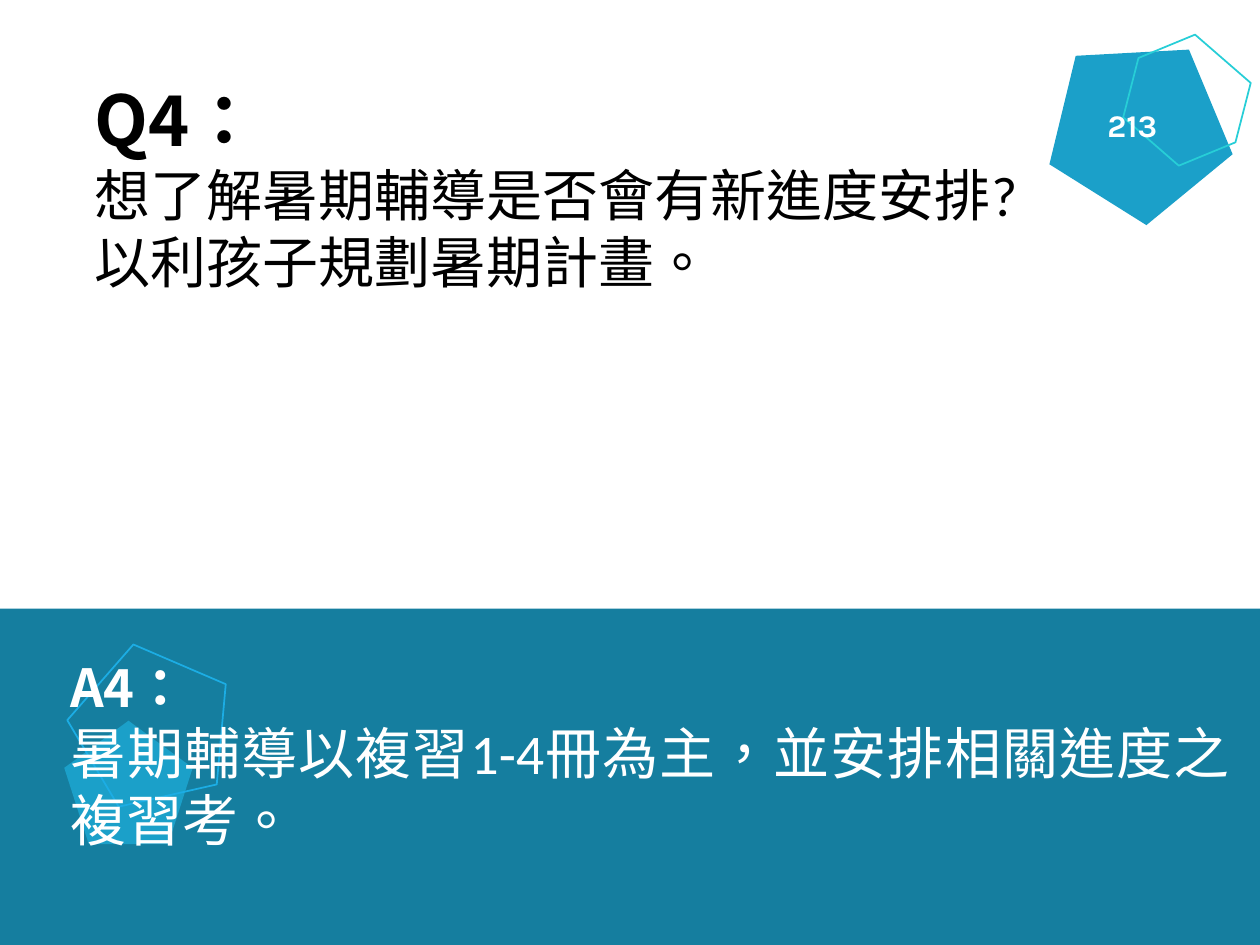
from pptx import Presentation
from pptx.dml.color import RGBColor as Rgb
from pptx.enum.shapes import MSO_SHAPE as Kind
from pptx.enum.text import PP_ALIGN as Align
from pptx.util import Inches, Pt


def tint(code):
    """Turn a hex string into a colour."""
    return Rgb.from_string(code)


class Deck:
    """Hold the style and the current slide."""

    wide, high = 10, 7.5
    deep, blue, sky, teal = "157E9F", "1BA0C9", "1CADE4", "27CED7"
    white, black = "FFFFFF", "000000"
    head, body, mark = "Noto Sans CJK SC", "Calibri", "Karla"

    def __init__(self):
        self.prs = Presentation()
        self.prs.slide_width = Inches(self.wide)
        self.prs.slide_height = Inches(self.high)
        self.slide = self.prs.slides.add_slide(self.prs.slide_layouts[6])

    def place(self, box):
        """Turn percent shares of the slide into lengths."""
        sides = (self.wide, self.high) * 2
        return [Inches(part * side / 100) for part, side in zip(box, sides)]

    def shape(self, kind, box, fill=None, line=None, turn=0):
        """Draw a filled or outlined preset shape."""
        item = self.slide.shapes.add_shape(kind, *self.place(box))
        item.shadow.inherit = False
        item.rotation = turn
        if fill:
            item.fill.solid()
            item.fill.fore_color.rgb = tint(fill)
        else:
            item.fill.background()
        if line:
            item.line.color.rgb = tint(line)
            item.line.width = Pt(1)
        else:
            item.line.fill.background()

    def text(self, box, rows, color):
        """Write rows of text, font, size, weight and alignment."""
        frame = self.slide.shapes.add_textbox(*self.place(box)).text_frame
        frame.word_wrap = True
        frame.text = "\n".join(row[0] for row in rows)
        for para, (_, face, size, bold, align) in zip(frame.paragraphs, rows):
            para.alignment = align
            for run in para.runs:
                font = run.font
                font.name, font.size, font.bold = face, Pt(size), bold
                font.color.rgb = tint(color)
                run._r.get_or_add_rPr().set("lang", "zh-TW")

    def talk(self, box, label, size, words, color, align):
        """Write a bold label above a passage."""
        self.text(box, [(label, self.head, size, True, Align.LEFT),
                        (words, self.body, 32, False, align)], color)


def main():
    """Build the question and answer slide."""
    deck = Deck()
    deck.shape(Kind.RECTANGLE, (0, 64.4, 100, 35.6), deck.deep)
    penta = Kind.REGULAR_PENTAGON
    deck.shape(penta, (83.4, 3.87, 14.7, 18.13), deck.blue, turn=32.1)
    deck.shape(penta, (5.1, 76.27, 10.2, 13.07), deck.blue)
    deck.shape(penta, (5.5, 68, 12.9, 16.4), line=deck.sky, turn=347.2)
    deck.shape(Kind.HEXAGON, (89.1, 4.8, 10.2, 11.6), line=deck.teal, turn=41)
    deck.talk((6.5, 7.47, 78.1, 24.67), "Q4：", 40,
              "想了解暑期輔導是否會有新進度安排?以利孩子規劃暑期計畫。",
              deck.black, Align.LEFT)
    deck.talk((4.6, 68.67, 94, 22.4), "A4：", 30,
              "暑期輔導以複習1-4冊為主，並安排相關進度之複習考。",
              deck.white, Align.JUSTIFY)
    deck.text((86.9, 10.53, 11.3, 5.33),
              [("213", deck.mark, 18, True, Align.LEFT)], deck.white)
    deck.prs.save("out.pptx")


if __name__ == "__main__":
    main()
